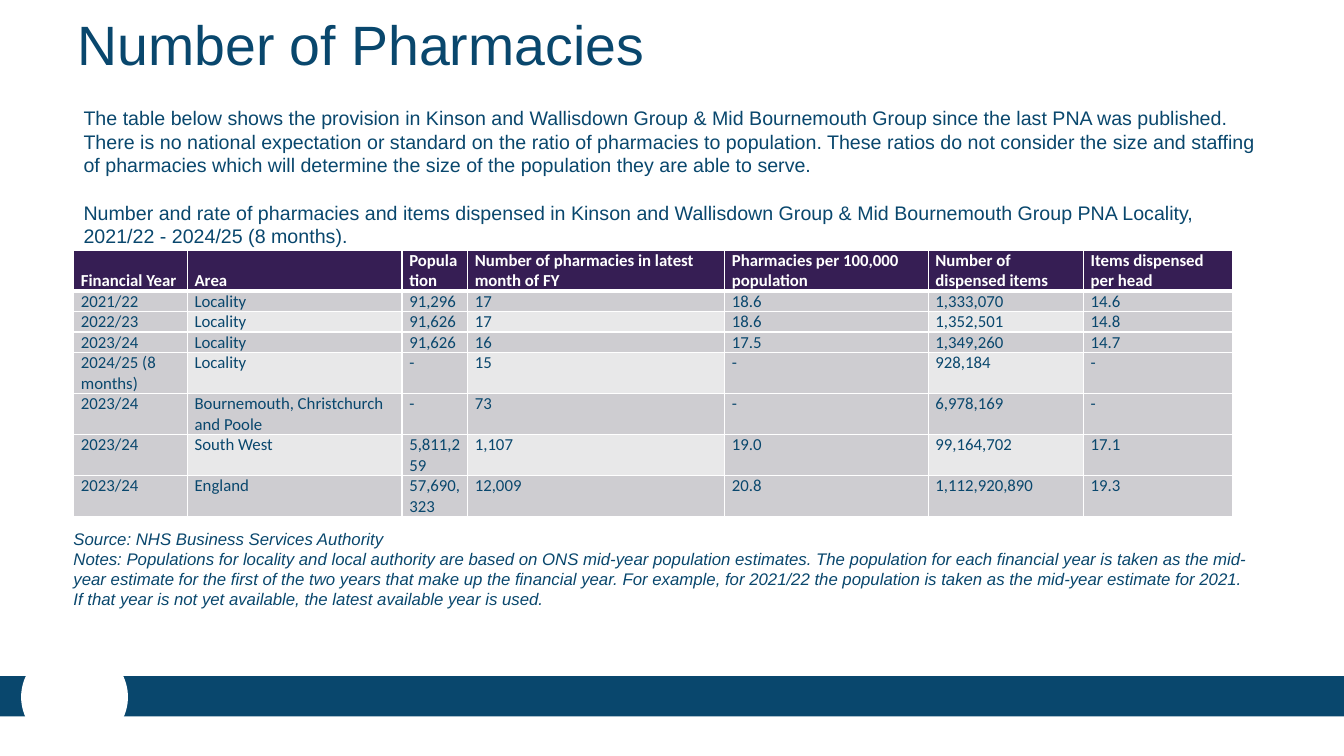
from lxml.etree import SubElement
from pptx import Presentation
from pptx.dml.color import RGBColor
from pptx.enum.shapes import MSO_SHAPE as SHAPE
from pptx.enum.text import MSO_ANCHOR as ANCHOR
from pptx.oxml.ns import qn
from pptx.util import Pt

NAVY = RGBColor(0x09, 0x47, 0x6D)
PURPLE = RGBColor(0x36, 0x1E, 0x54)
GREY = RGBColor(0xCE, 0xCD, 0xD1)
PALE = RGBColor(0xE8, 0xE8, 0xE9)
WHITE = RGBColor(0xFF, 0xFF, 0xFF)

COLUMNS = [81.2, 153.4, 46.8, 183.6, 145.4, 110.9, 106.6]
ROW_LINES = [2, 1, 1, 1, 2, 2, 2, 2]
ROWS = [
    ["Financial Year", "Area", "Population", "Number of pharmacies in latest month of FY",
     "Pharmacies per 100,000 population", "Number of dispensed items", "Items dispensed per head"],
    ["2021/22", "Locality", "91,296", "17", "18.6", "1,333,070", "14.6"],
    ["2022/23", "Locality", "91,626", "17", "18.6", "1,352,501", "14.8"],
    ["2023/24", "Locality", "91,626", "16", "17.5", "1,349,260", "14.7"],
    ["2024/25 (8 months)", "Locality", "-", "15", "-", "928,184", "-"],
    ["2023/24", "Bournemouth, Christchurch and Poole", "-", "73", "-", "6,978,169", "-"],
    ["2023/24", "South West", "5,811,259", "1,107", "19.0", "99,164,702", "17.1"],
    ["2023/24", "England", "57,690,323", "12,009", "20.8", "1,112,920,890", "19.3"],
]
INTRO = [
    "The table below shows the provision in Kinson and Wallisdown Group & Mid Bournemouth Group "
    "since the last PNA was published. There is no national expectation or standard on the ratio "
    "of pharmacies to population. These ratios do not consider the size and staffing of pharmacies "
    "which will determine the size of the population they are able to serve.",
    "Number and rate of pharmacies and items dispensed in Kinson and Wallisdown Group & "
    "Mid Bournemouth Group PNA Locality, 2021/22 - 2024/25 (8 months).",
]
NOTES = [
    "Source: NHS Business Services Authority",
    "Notes: Populations for locality and local authority are based on ONS mid-year population "
    "estimates. The population for each financial year is taken as the mid-year estimate for the "
    "first of the two years that make up the financial year. For example, for 2021/22 the population "
    "is taken as the mid-year estimate for 2021. If that year is not yet available, the latest "
    "available year is used.",
]


def write(p, text, size=12, font="Arial", color=NAVY, bold=False, italic=False):
    r = p.add_run()
    r.text = text
    r.font.size, r.font.name = Pt(size), font
    r.font.bold, r.font.italic = bold, italic
    r.font.color.rgb = color


class Deck:
    """Holds the style and the current slide."""

    def __init__(self):
        self.prs = Presentation()
        self.prs.slide_width, self.prs.slide_height = Pt(960), Pt(540)
        self.s = self.prs.slides.add_slide(self.prs.slide_layouts[6])

    def shape(self, kind, x, y, w, h, fill):
        sp = self.s.shapes.add_shape(kind, Pt(x), Pt(y), Pt(w), Pt(h))
        sp.shadow.inherit = False
        sp.fill.solid()
        sp.fill.fore_color.rgb = fill
        sp.line.fill.background()

    def text(self, x, y, w, h, paragraphs, gap=0, spacing=None, **style):
        tf = self.s.shapes.add_textbox(Pt(x), Pt(y), Pt(w), Pt(h)).text_frame
        tf.word_wrap, tf.vertical_anchor = True, ANCHOR.MIDDLE
        for i, text in enumerate(paragraphs):
            p = tf.add_paragraph() if i else tf.paragraphs[0]
            if i:
                p.space_before = Pt(gap)
            if spacing:
                p.line_spacing = spacing
            write(p, text, **style)

    def border(self, cell, side, width):
        ln = SubElement(cell._tc.get_or_add_tcPr(), qn(f"a:ln{side}"), w=str(Pt(width)))
        fill = SubElement(ln, qn("a:solidFill"))
        SubElement(fill, qn("a:srgbClr"), val=str(WHITE))

    def cell(self, cell, text, row, col):
        head = row == 0
        cell.margin_left = cell.margin_right = Pt(5.2)
        cell.margin_top = cell.margin_bottom = 0
        cell.vertical_anchor = ANCHOR.BOTTOM if head else ANCHOR.TOP
        thick = {0: "B", 1: "T"}.get(row)
        for side in "LRTB":
            self.border(cell, side, 3 if side == thick else 1)
        cell.fill.solid()
        pale = row % 2 == 0 and col % 2 == 1
        cell.fill.fore_color.rgb = PURPLE if head else PALE if pale else GREY
        p = cell.text_frame.paragraphs[0]
        p.space_after = Pt(1.8)
        write(p, text, font="Calibri", color=WHITE if head else NAVY, bold=head)

    def table(self, x, y, rows, widths, lines, line_height):
        frame = self.s.shapes.add_table(len(rows), len(widths), Pt(x), Pt(y),
                                        Pt(sum(widths)), Pt(sum(lines) * line_height))
        table = frame.table
        for column, width in zip(table.columns, widths):
            column.width = Pt(width)
        for i, values in enumerate(rows):
            table.rows[i].height = Pt(lines[i] * line_height)
            for j, value in enumerate(values):
                self.cell(table.cell(i, j), value, i, j)


def main():
    deck = Deck()
    deck.shape(SHAPE.RECTANGLE, 0, 483, 960, 28.8, NAVY)
    deck.shape(SHAPE.OVAL, 15.1, 461.5, 76.3, 72.7, WHITE)
    deck.table(52.6, 178.6, ROWS, COLUMNS, ROW_LINES, 14.65)
    deck.text(52.6, 72, 854.6, 108.7, INTRO, gap=16.8, size=14)
    deck.text(45.4, 373.7, 854.6, 65.5, NOTES, italic=True)
    deck.text(48.2, 8.6, 612, 51.1, ["Number of Pharmacies"], spacing=0.9, size=39.6)
    deck.prs.save("out.pptx")


if __name__ == "__main__":
    main()
